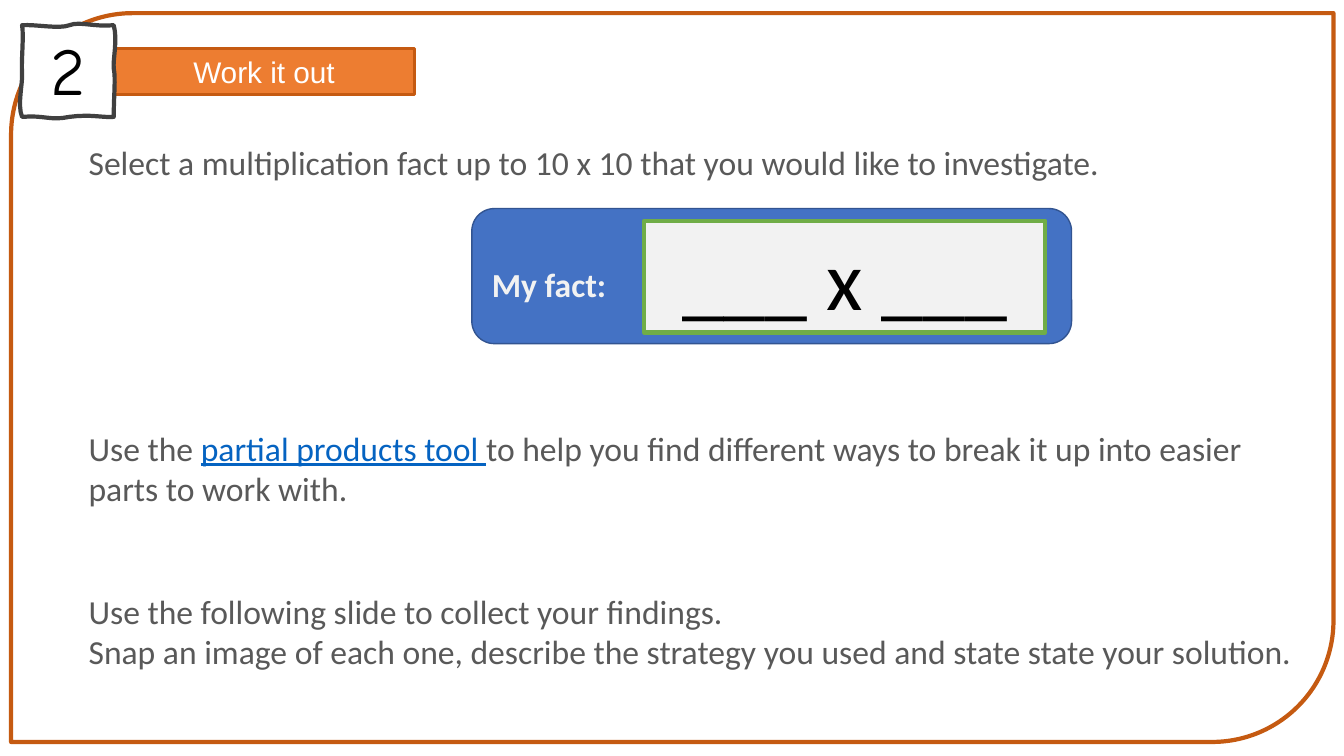
import pptx
import pptx.dml.color
import pptx.enum.shapes
import pptx.enum.text
import pptx.util

Pt = pptx.util.Pt
SHAPES = pptx.enum.shapes.MSO_SHAPE
ANCHOR = pptx.enum.text.MSO_ANCHOR
ALIGN = pptx.enum.text.PP_ALIGN

BODY_LINE = 29.3
CURVE_STEPS = 8
GREY, LINK, PALE = "595959", "0563C1", "F2F2F2"

BADGE_CURVES = [
    ((10, -0.7), (26.6, 2.9), (33.8, 0)),
    ((41.8, -2.9), (51.1, 1.4), (65.5, 0)),
    ((68.4, 10.8), (64.8, 24.5), (65.5, 31)),
    ((67, 37.4), (65.5, 50.4), (65.5, 65.5)),
    ((58.3, 66.2), (49, 63.4), (33.8, 65.5)),
    ((19.4, 68.4), (16.6, 64.1), (0, 65.5)),
    ((-3.6, 56.9), (0.7, 41), (0, 33.8)),
    ((-0.7, 26.6), (1.4, 7.2), (0, 0)),
]

BODY = [
    (0, 0, [("Select a multiplication fact up to 10 x 10 that you would like to investigate.", GREY)]),
    (2, 288, [("My fact:", PALE)]),
    (3, 0, [("Use the ", GREY), ("partial products tool ", LINK),
            ("to help you find different ways to break it up into easier parts to work with.", GREY)]),
    (2, 0, [("Use the following slide to collect your findings.", GREY)]),
    (0, 0, [("Snap an image of each one, describe the strategy you used and state state your solution.", GREY)]),
]


def color(value):
    """Turn a hex string into a colour."""
    return pptx.dml.color.RGBColor.from_string(value)


def style_shape(shape, fill, line, width):
    """Set the fill and line of a shape and remove its shadow."""
    shape.shadow.inherit = False
    if fill:
        shape.fill.solid()
        shape.fill.fore_color.rgb = color(fill)
    else:
        shape.fill.background()
    shape.line.color.rgb = color(line)
    shape.line.width = Pt(width)


def add_box(slide, kind, box, fill, line, width):
    """Add a preset shape in the given box."""
    shape = slide.shapes.add_shape(kind, *[Pt(length) for length in box])
    style_shape(shape, fill, line, width)
    return shape


def add_run(paragraph, text, font, size, value):
    """Add one formatted run to a paragraph and return it."""
    run = paragraph.add_run()
    run.text = text
    run.font.name = font
    run.font.size = Pt(size)
    run.font.color.rgb = color(value)
    return run


def write_label(shape, text, font, size, value, anchor):
    """Write one centred line of text in a shape."""
    frame = shape.text_frame
    frame.word_wrap = True
    frame.vertical_anchor = anchor
    paragraph = frame.paragraphs[0]
    paragraph.alignment = ALIGN.CENTER
    add_run(paragraph, text, font, size, value)


def curve_points(start, curves):
    """Sample a chain of cubic curves as points."""
    points = []
    for first, second, end in curves:
        for step in range(1, CURVE_STEPS + 1):
            t = step / CURVE_STEPS
            weights = ((1 - t) ** 3, 3 * t * (1 - t) ** 2, 3 * t * t * (1 - t), t ** 3)
            corners = (start, first, second, end)
            points.append(tuple(sum(w * corner[axis] for w, corner in zip(weights, corners))
                                for axis in (0, 1)))
        start = end
    return points


def add_badge(slide, left, top):
    """Draw the hand-drawn number badge at the given corner."""
    points = [(Pt(left + x), Pt(top + y)) for x, y in curve_points((0, 0), BADGE_CURVES)]
    builder = slide.shapes.build_freeform(Pt(left), Pt(top), scale=1.0)
    builder.add_line_segments(points, close=True)
    badge = builder.convert_to_shape()
    style_shape(badge, "FFFFFF", "404040", 3)
    write_label(badge, "2", "Comic Neue", 48, "000000", ANCHOR.TOP)


def add_header(slide, left, top):
    """Draw the title bar and its number badge."""
    bar = add_box(slide, SHAPES.RECTANGLE, (left + 65.5, top + 16.6, 214.6, 33.1),
                  "ED7D31", "C55A11", 2.25)
    write_label(bar, "Work it out", "Arial", 21.3, "FFFFFF", ANCHOR.TOP)
    add_badge(slide, left, top)


def add_body(slide, box):
    """Write the instructions and the fact label."""
    frame = slide.shapes.add_textbox(*[Pt(length) for length in box]).text_frame
    frame.word_wrap = True
    frame.margin_right = Pt(5)
    for index, (gap_lines, indent, parts) in enumerate(BODY):
        paragraph = frame.paragraphs[0] if index == 0 else frame.add_paragraph()
        if gap_lines:
            paragraph.space_before = Pt(gap_lines * BODY_LINE)
        if indent:
            paragraph._p.get_or_add_pPr().set("marL", str(Pt(indent)))
        for text, value in parts:
            run = add_run(paragraph, text, "Calibri", 24, value)
            run.font.underline = value == LINK
            run.font.bold = value == PALE


def add_fact_card(slide, left, top):
    """Draw the blue card behind the fact."""
    add_box(slide, SHAPES.ROUNDED_RECTANGLE, (left, top, 428.4, 96.5), "4472C4", "325491", 1)


def add_fact_blank(slide, left, top):
    """Draw the field where the fact is filled in."""
    blank = add_box(slide, SHAPES.RECTANGLE, (left, top, 286.6, 79.9), PALE, "70AD47", 3)
    write_label(blank, "___ x ___", "Calibri", 60, "000000", ANCHOR.MIDDLE)


def main():
    """Build and save the presentation."""
    presentation = pptx.Presentation()
    presentation.slide_width = Pt(960)
    presentation.slide_height = Pt(540)
    slide = presentation.slides.add_slide(presentation.slide_layouts[6])
    add_box(slide, SHAPES.ROUND_2_DIAG_RECTANGLE, (7.9, 9.4, 944.6, 520.6), None, "C55A11", 3)
    add_header(slide, 15.8, 18)
    add_fact_card(slide, 337, 149)
    add_body(slide, (56.2, 97.9, 873.4, 385.2))
    add_fact_blank(slide, 460.1, 157.7)
    presentation.save("out.pptx")


if __name__ == "__main__":
    main()
